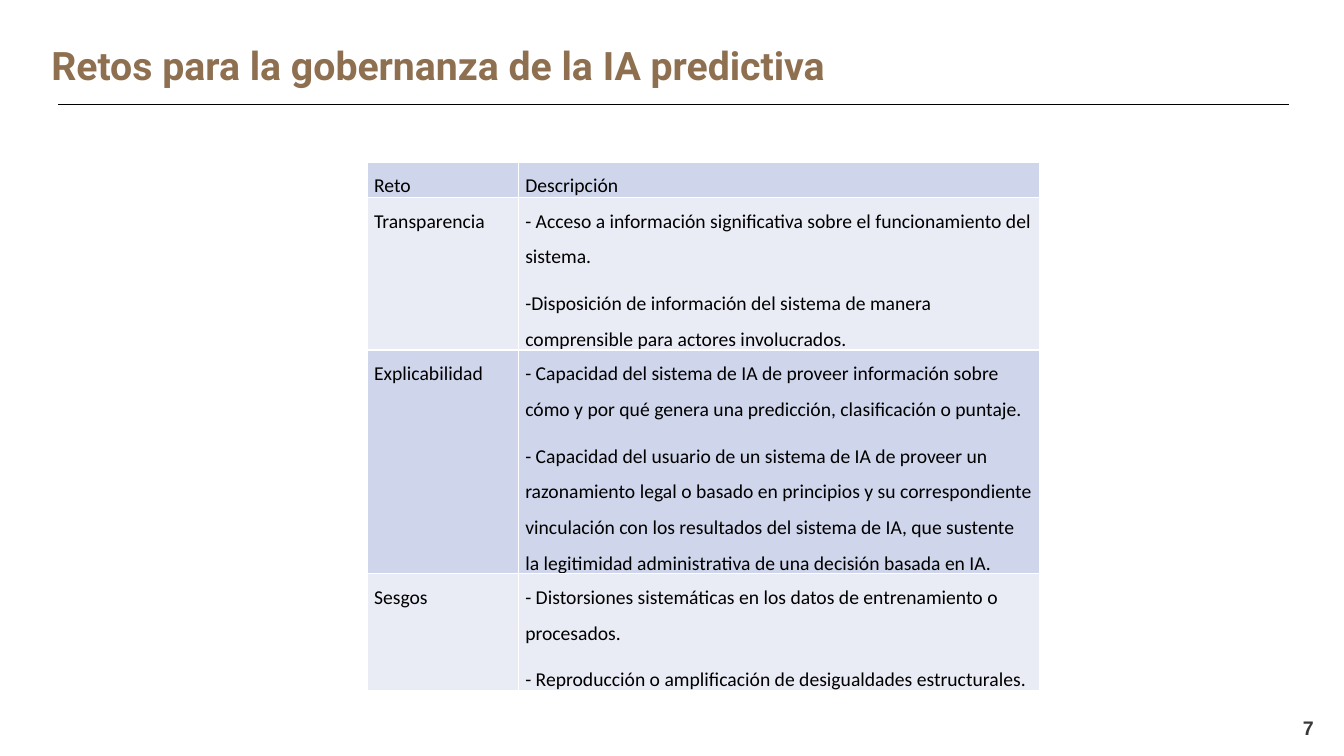
from lxml.etree import SubElement
from pptx import Presentation
from pptx.dml.color import RGBColor
from pptx.enum.shapes import MSO_CONNECTOR
from pptx.enum.text import MSO_ANCHOR, PP_ALIGN
from pptx.oxml.ns import qn
from pptx.util import Emu, Pt

PX = 9144  # one hundred px to the inch
BROWN = RGBColor(0x8E, 0x70, 0x50)
BLACK = RGBColor(0x00, 0x00, 0x00)
DARK_GREY = RGBColor(0x3B, 0x38, 0x38)
WHITE = RGBColor(0xFF, 0xFF, 0xFF)
BAND_DARK = RGBColor(0xCF, 0xD5, 0xEA)
BAND_LIGHT = RGBColor(0xE9, 0xEB, 0xF5)

TITLE = "Retos para la gobernanza de la IA predictiva"
COLUMN_WIDTHS = (150, 517)
# Each row: height, challenge, description paragraphs
CHALLENGES = [
    (35, "Reto", ["Descripción"]),
    (151, "Transparencia", [
        "- Acceso a información significativa sobre el funcionamiento del sistema.",
        "-Disposición de información del sistema de manera comprensible para "
        "actores involucrados.",
    ]),
    (222, "Explicabilidad", [
        "- Capacidad del sistema de IA de proveer información sobre cómo y por qué "
        "genera una predicción, clasificación o puntaje.",
        "- Capacidad del usuario de un sistema de IA de proveer un razonamiento legal "
        "o basado en principios y su correspondiente vinculación con los resultados "
        "del sistema de IA, que sustente la legitimidad administrativa de una "
        "decisión basada en IA.",
    ]),
    (115, "Sesgos", [
        "- Distorsiones sistemáticas en los datos de entrenamiento o procesados.",
        "- Reproducción o amplificación de desigualdades estructurales.",
    ]),
]


def px(*lengths):
    return [Emu(length * PX) for length in lengths]


def set_font(para, name, size, color, bold=False):
    font = para.font
    font.name, font.size, font.bold = name, Pt(size), bold
    font.color.rgb = color


def add_header(page, left, top, width, height):
    # Title
    title = page.shapes.title
    title.left, title.top, title.width, title.height = px(left, top, width, height)
    frame = title.text_frame
    frame.text = TITLE
    frame.word_wrap = True
    frame.vertical_anchor = MSO_ANCHOR.MIDDLE
    frame.margin_left, frame.margin_right = px(13, 13)
    para = frame.paragraphs[0]
    para.alignment = PP_ALIGN.LEFT
    set_font(para, "Roboto", 28, BROWN, bold=True)

    # Rule under the title
    rule_top = top + height + 8
    rule = page.shapes.add_connector(
        MSO_CONNECTOR.STRAIGHT,
        *px(left + 20, rule_top, left + width - 11, rule_top))
    rule.line.color.rgb = BLACK
    rule.line.width = Pt(0.5)
    SubElement(rule._element.spPr, qn("a:effectLst"))


def add_cell_borders(cell):
    properties = cell._tc.get_or_add_tcPr()
    for side in ("lnL", "lnR", "lnT", "lnB"):
        border = SubElement(properties, qn(f"a:{side}"), w=str(Pt(1)))
        fill = SubElement(border, qn("a:solidFill"))
        SubElement(fill, qn("a:srgbClr"), val=str(WHITE))


def fill_cell(cell, texts, color, alignment):
    add_cell_borders(cell)
    cell.fill.solid()
    cell.fill.fore_color.rgb = color
    cell.margin_left, cell.margin_top, cell.margin_right, cell.margin_bottom = px(7, 0, 7, 0)
    frame = cell.text_frame
    frame.text = "\n".join(texts)
    for para in frame.paragraphs:
        para.alignment = alignment
        para.line_spacing = 1.5
        para.space_after = Pt(8)
        set_font(para, "Calibri", 14, BLACK)


def add_challenge_table(page, left, top):
    width = sum(COLUMN_WIDTHS)
    height = sum(row_height for row_height, _, _ in CHALLENGES)
    table = page.shapes.add_table(
        len(CHALLENGES), len(COLUMN_WIDTHS), *px(left, top, width, height)).table
    table.first_row = table.horz_banding = False
    for column, column_width in zip(table.columns, COLUMN_WIDTHS):
        column.width = Emu(column_width * PX)
    for index, (row_height, challenge, description) in enumerate(CHALLENGES):
        table.rows[index].height = Emu(row_height * PX)
        color = BAND_LIGHT if index % 2 else BAND_DARK
        fill_cell(table.cell(index, 0), [challenge], color, PP_ALIGN.JUSTIFY)
        alignment = PP_ALIGN.LEFT if index else PP_ALIGN.JUSTIFY
        fill_cell(table.cell(index, 1), description, color, alignment)


def add_page_number(page, left, top, width, height):
    frame = page.shapes.add_textbox(*px(left, top, width, height)).text_frame
    frame.word_wrap = True
    frame.vertical_anchor = MSO_ANCHOR.BOTTOM
    frame.text = "7"
    para = frame.paragraphs[0]
    para.alignment = PP_ALIGN.RIGHT
    set_font(para, "Arial", 14, DARK_GREY, bold=True)


def main():
    deck = Presentation()
    deck.slide_width, deck.slide_height = px(1333, 750)
    page = deck.slides.add_slide(deck.slide_layouts.get_by_name("Title Only"))
    add_header(page, 38, 33, 1251, 63)
    add_page_number(page, 1013, 699, 300, 40)
    add_challenge_table(page, 364, 161)
    deck.save("out.pptx")


if __name__ == "__main__":
    main()
